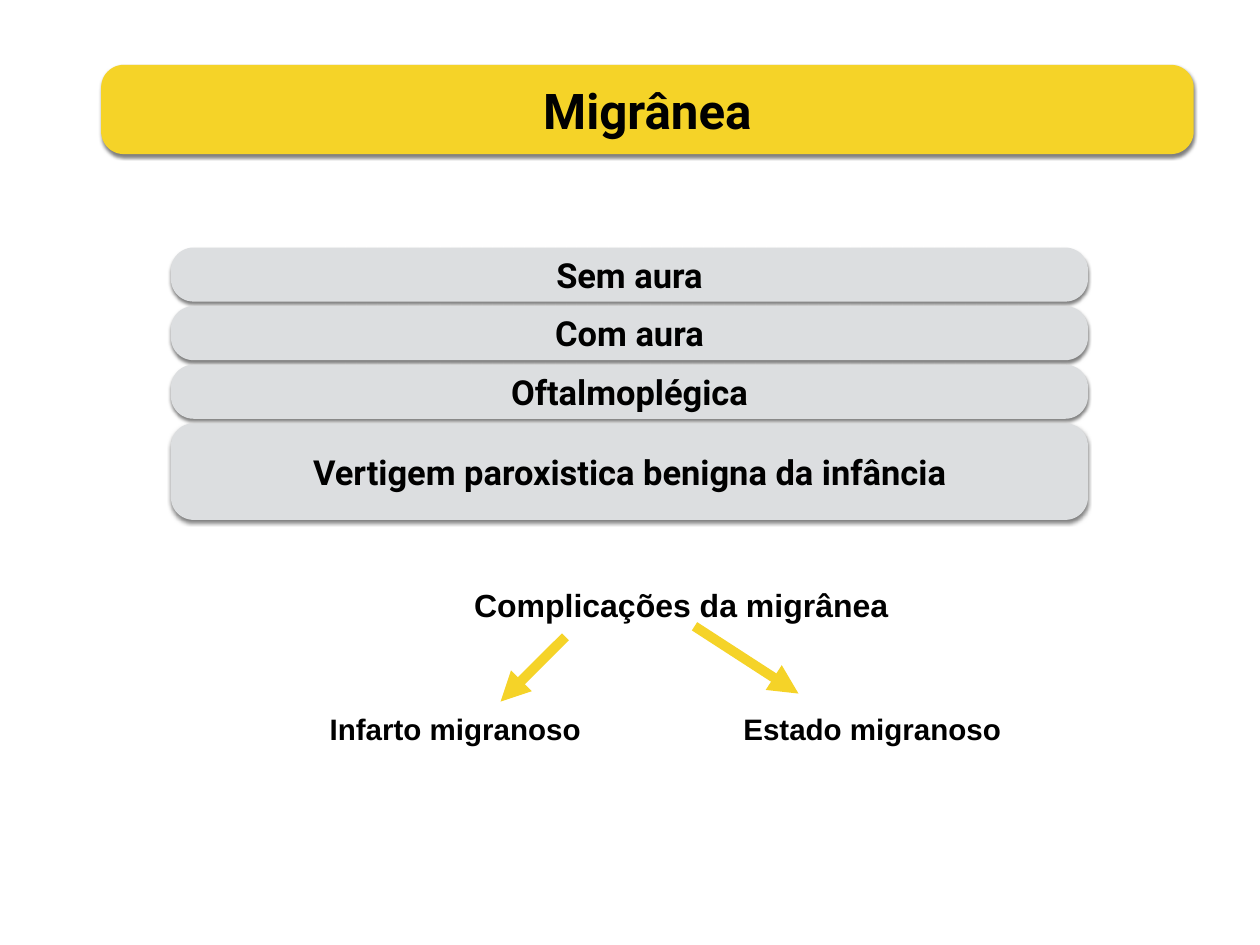
from lxml import etree
from pptx import Presentation
from pptx import util as u
from pptx.dml.color import RGBColor
from pptx.enum import shapes, text
from pptx.oxml.ns import qn

COLORS = {"yellow": "F5D328", "gray": "DCDEE0", "black": "000000"}
CORNER_RADIUS = 0.65  # cm, shared by all bars


def color(name):
    return RGBColor.from_string(COLORS[name])


def write(shape, wording, font, size, align, inset):
    frame = shape.text_frame
    frame.word_wrap = True
    frame.margin_left = frame.margin_right = u.Cm(inset)
    frame.margin_top = frame.margin_bottom = u.Cm(inset)
    para = frame.paragraphs[0]
    para.text = wording
    para.alignment = align
    para.font.name = font
    para.font.size = u.Pt(size)
    para.font.bold = True
    para.font.color.rgb = color("black")


def add_soft_shadow(shape):
    shape.shadow.inherit = False
    effects = shape._element.spPr.find(qn("a:effectLst"))
    shadow = etree.SubElement(
        effects, qn("a:outerShdw"), blurRad=str(u.Pt(3)), dist=str(u.Pt(2)),
        dir=str(90 * 60000), rotWithShape="0")
    tint = etree.SubElement(shadow, qn("a:srgbClr"), val=COLORS["black"])
    etree.SubElement(tint, qn("a:alpha"), val="50000")


def add_bar(page, wording, left, top, width, height, fill, size):
    bar = page.shapes.add_shape(
        shapes.MSO_SHAPE.ROUNDED_RECTANGLE,
        u.Cm(left), u.Cm(top), u.Cm(width), u.Cm(height))
    bar.adjustments[0] = CORNER_RADIUS / height
    bar.fill.solid()
    bar.fill.fore_color.rgb = color(fill)
    bar.line.fill.background()
    add_soft_shadow(bar)
    bar.text_frame.vertical_anchor = text.MSO_ANCHOR.MIDDLE
    write(bar, wording, "Roboto", size, text.PP_ALIGN.CENTER, 0.15)


def add_label(page, wording, left, top, width, height, size):
    box = page.shapes.add_textbox(u.Cm(left), u.Cm(top), u.Cm(width), u.Cm(height))
    box.text_frame.auto_size = text.MSO_AUTO_SIZE.SHAPE_TO_FIT_TEXT
    write(box, wording, "Arial", size, text.PP_ALIGN.LEFT, 0.13)


def add_arrow(page, start_x, start_y, end_x, end_y):
    arrow = page.shapes.add_connector(
        shapes.MSO_CONNECTOR.STRAIGHT,
        u.Cm(start_x), u.Cm(start_y), u.Cm(end_x), u.Cm(end_y))
    arrow.line.color.rgb = color("yellow")
    arrow.line.width = u.Pt(8)
    properties = arrow._element.spPr
    etree.SubElement(properties.find(qn("a:ln")), qn("a:tailEnd"), type="triangle")
    etree.SubElement(properties, qn("a:effectLst"))


def main():
    deck = Presentation()
    deck.slide_width, deck.slide_height = u.Cm(36.12), u.Cm(27.1)
    page = deck.slides.add_slide(deck.slide_layouts[6])

    # Migraine types, stacked at an even pitch; the last bar is taller
    types = [("Sem aura", 1.55), ("Com aura", 1.55), ("Oftalmoplégica", 1.55),
             ("Vertigem paroxistica benigna da infância", 2.77)]
    for row, (wording, height) in enumerate(types):
        add_bar(page, wording, 4.9, 7.1 + row * 1.68, 26.29, height, "gray", 28)

    # Title
    add_bar(page, "Migrânea", 2.9, 1.86, 31.32, 2.56, "yellow", 40)

    # Complications and their two outcomes
    add_label(page, "Complicações da migrânea", 13.46, 16.66, 12.95, 1.32, 26)
    add_label(page, "Infarto migranoso", 9.32, 20.27, 9.12, 1.22, 24)
    add_label(page, "Estado migranoso", 21.18, 20.27, 9.73, 1.22, 24)
    add_arrow(page, 16.21, 18.26, 14.35, 20.12)
    add_arrow(page, 19.91, 17.96, 22.89, 19.89)

    deck.save("out.pptx")


if __name__ == "__main__":
    main()
